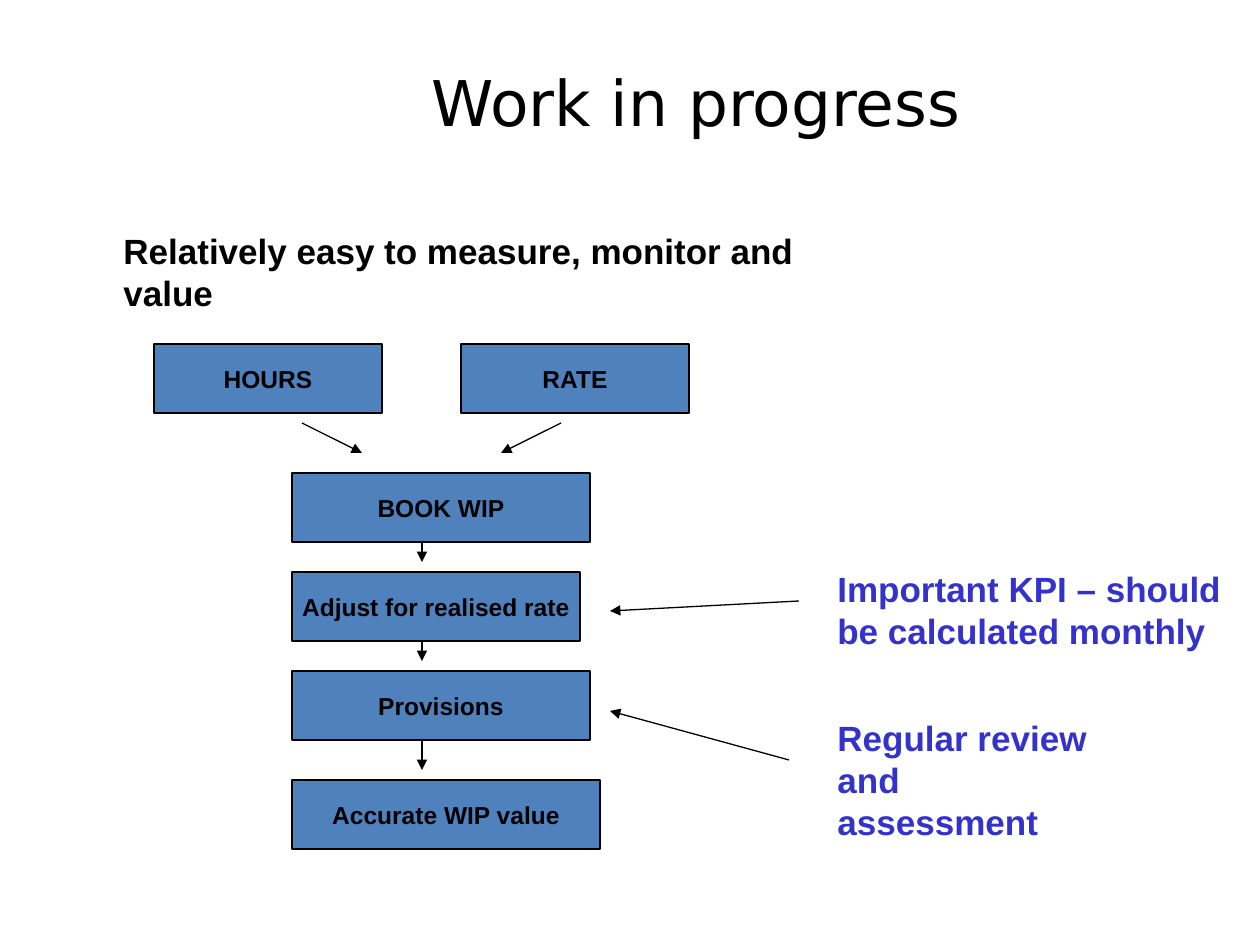
from lxml import etree
from pptx import Presentation
from pptx import util as u
from pptx.dml.color import RGBColor
from pptx.enum import shapes, text
from pptx.oxml.ns import qn

PX = 914400 / 126  # EMU per px

BLACK = RGBColor(0x00, 0x00, 0x00)
BOX_BLUE = RGBColor(0x4F, 0x81, 0xBD)
NOTE_BLUE = RGBColor(0x33, 0x33, 0xCC)

BOX_HEIGHT = 69
INPUT_TOP, INPUT_WIDTH = 344, 228
STEP_LEFT, STEP_ARROW_X = 292, 422
NOTE_LEFT = 825

INPUTS = [("HOURS", 154), ("RATE", 461)]
# label, top, width, end of the arrow below
STEPS = [
    ("BOOK WIP", 473, 298, 562),
    ("Adjust for realised rate", 572, 288, 661),
    ("Provisions", 671, 298, 770),
    ("Accurate WIP value", 780, 308, None),
]


def px(*values):
    return [u.Emu(round(v * PX)) for v in values]


def set_font(p, size, color, name="Arial", bold=True):
    p.font.name = name
    p.font.size = u.Pt(size)
    p.font.bold = bold
    p.font.color.rgb = color


def add_title(s, label, *frame):
    sp = s.shapes.title
    sp.left, sp.top, sp.width, sp.height = px(*frame)
    tf = sp.text_frame
    tf.text = label
    tf.vertical_anchor = text.MSO_ANCHOR.MIDDLE
    p = tf.paragraphs[0]
    p.alignment = text.PP_ALIGN.CENTER
    set_font(p, 36, BLACK, "DejaVu Sans", False)


def add_text(s, lines, color, *frame):
    tf = s.shapes.add_textbox(*px(*frame)).text_frame
    tf.word_wrap = True
    tf.text = "\n".join(lines)
    for p in tf.paragraphs:
        set_font(p, 20, color)


def add_box(s, label, *frame):
    sp = s.shapes.add_shape(shapes.MSO_SHAPE.RECTANGLE, *px(*frame))
    sp.shadow.inherit = False
    sp.fill.solid()
    sp.fill.fore_color.rgb = BOX_BLUE
    sp.line.color.rgb = BLACK
    sp.line.width = u.Pt(0.75)
    tf = sp.text_frame
    tf.word_wrap = False
    tf.vertical_anchor = text.MSO_ANCHOR.MIDDLE
    tf.text = label
    p = tf.paragraphs[0]
    p.alignment = text.PP_ALIGN.CENTER
    set_font(p, 14, BLACK)


def add_arrow(s, *ends):
    line = s.shapes.add_connector(shapes.MSO_CONNECTOR.STRAIGHT, *px(*ends))
    line.line.color.rgb = BLACK
    line.line.width = u.Pt(0.75)
    ln = line.line._get_or_add_ln()
    etree.SubElement(ln, qn("a:tailEnd"), type="triangle")
    etree.SubElement(line._element.spPr, qn("a:effectLst"))


def main():
    prs = Presentation()
    prs.slide_width, prs.slide_height = px(1260, 945)
    s = prs.slides.add_slide(prs.slide_layouts[5])

    # Heading
    add_title(s, "Work in progress", 159, 29, 1074, 145)
    add_text(s, ["Relatively easy to measure, monitor and value"], BLACK,
             111, 223, 780, 54)

    # Inputs and their arrows into the first step
    for label, left in INPUTS:
        add_box(s, label, left, INPUT_TOP, INPUT_WIDTH, BOX_HEIGHT)
    add_arrow(s, 302, 423, 362, 453)
    add_arrow(s, 561, 423, 501, 453)

    # Chain of steps
    for label, top, width, arrow_end in STEPS:
        add_box(s, label, STEP_LEFT, top, width, BOX_HEIGHT)
        if arrow_end:
            add_arrow(s, STEP_ARROW_X, top + BOX_HEIGHT,
                      STEP_ARROW_X, arrow_end)

    # Side notes pointing at steps
    add_text(s, ["Important KPI – should", "be calculated monthly"], NOTE_BLUE,
             NOTE_LEFT, 561, 418, 97)
    add_arrow(s, 799, 601, 610, 611)
    add_text(s, ["Regular review and", "assessment"], NOTE_BLUE,
             NOTE_LEFT, 710, 346, 97)
    add_arrow(s, 789, 760, 610, 711)

    prs.save("out.pptx")


if __name__ == "__main__":
    main()
